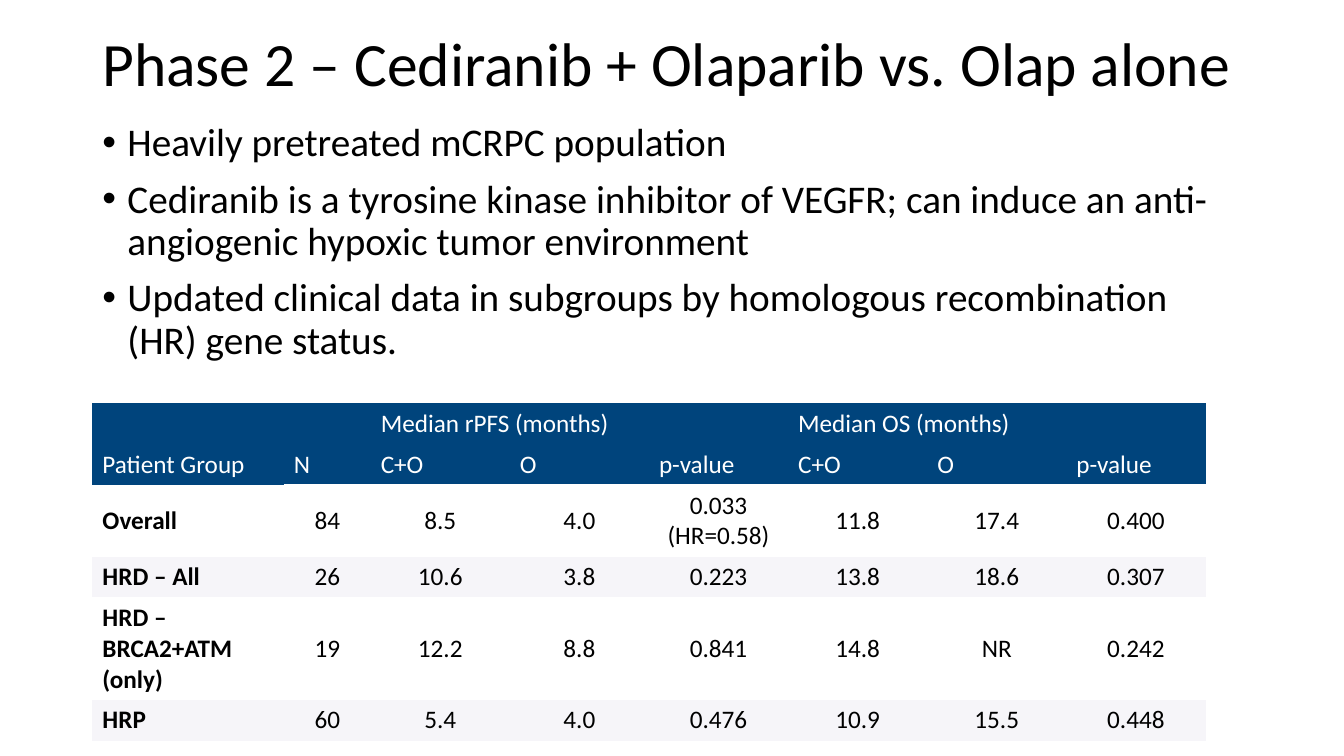
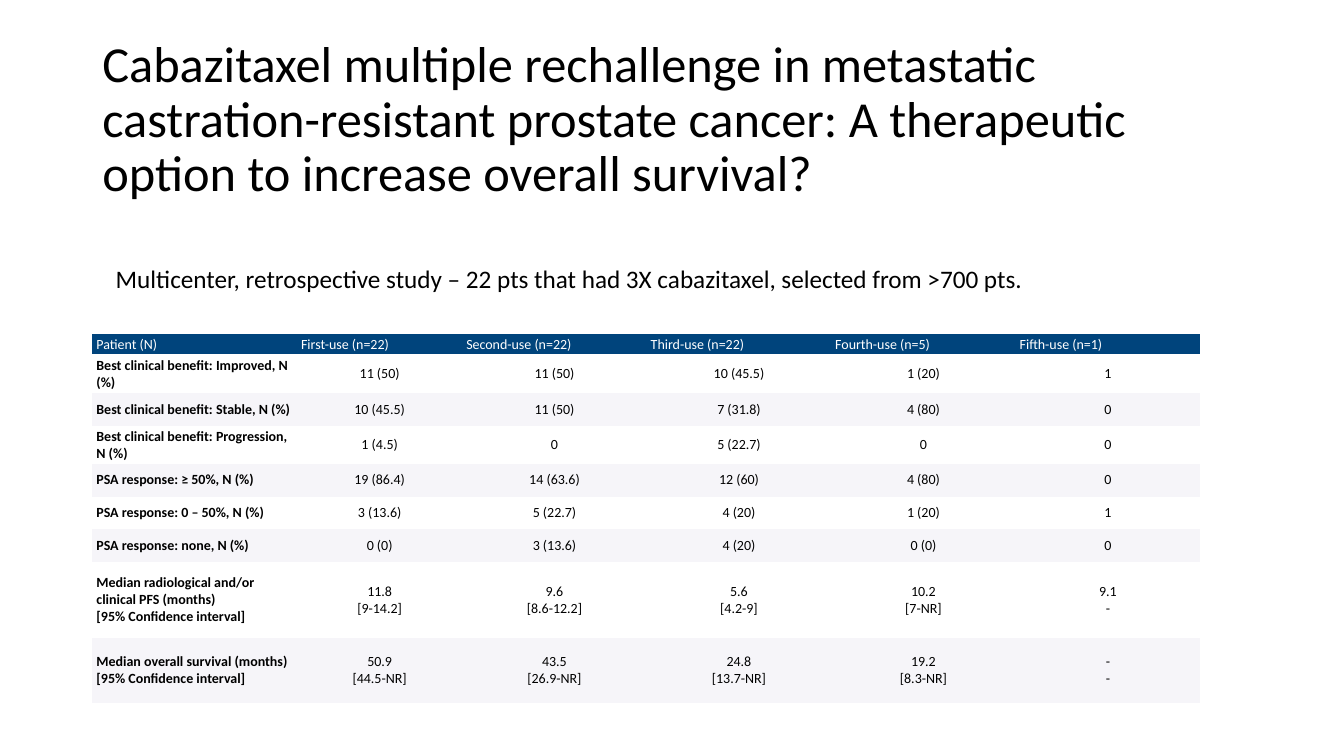
from copy import deepcopy

from lxml.etree import SubElement
from pptx import Presentation
from pptx.dml.color import RGBColor
from pptx.enum.text import MSO_ANCHOR as ANCHOR, PP_ALIGN as ALIGN
from pptx.oxml import parse_xml
from pptx.oxml.ns import nsdecls, qn
from pptx.util import Pt

COLORS = {"text": "000000", "header": "00447C", "band": "F6F5F9", "white": "FFFFFF"}
FONT = "Calibri"
LEFT, WIDTH = 66, 828
NO_STYLE = "{2D5ABB26-0587-4C30-8999-92F81FD0307C}"


def rgb(name):
    return RGBColor.from_string(COLORS[name])


def write(tf, text, size=18, color="text", bold=False, align=ALIGN.LEFT,
          spacing=None, before=None, bullet=None):
    """Fill a text frame; a list gives paragraphs, a newline a line break."""
    for i, line in enumerate([text] if isinstance(text, str) else text):
        p = tf.add_paragraph() if i else tf.paragraphs[0]
        p.text = line.replace("\n", "\v")
        p.alignment = align
        if spacing:
            p.line_spacing = spacing
        if before:
            p.space_before = Pt(before)
        for r in p.runs:
            r.font.name, r.font.size, r.font.bold = FONT, Pt(size), bold
            r.font.color.rgb = rgb(color)
        # Line breaks take the format of the text around them
        for br in p._p.findall(qn("a:br")):
            br.append(deepcopy(p.runs[0]._r.find(qn("a:rPr"))))
        if bullet:
            pPr = p._p.get_or_add_pPr()
            pPr.set("marL", str(Pt(18)))
            pPr.set("indent", str(Pt(-18)))
            SubElement(pPr, qn("a:buFont")).set("typeface", "Arial")
            SubElement(pPr, qn("a:buChar")).set("char", bullet)


def add_text(slide, box, text, anchor=ANCHOR.TOP, wrap=True, **fmt):
    tf = slide.shapes.add_textbox(*map(Pt, box)).text_frame
    tf.word_wrap, tf.vertical_anchor = wrap, anchor
    write(tf, text, **fmt)


def add_title(slide, top, height, text, size):
    add_text(slide, (LEFT, top, WIDTH, height), text, ANCHOR.MIDDLE,
             size=size, spacing=0.9)


def add_bottom_rule(cell):
    cell._tc.get_or_add_tcPr().insert(0, parse_xml(
        f'<a:lnB {nsdecls("a")} w="{Pt(0.75)}"><a:solidFill>'
        f'<a:srgbClr val="{COLORS["white"]}"/></a:solidFill></a:lnB>'))


def add_data_table(slide, top, widths, heights, rows, size, header_rows=1,
                   merges=(), margins=None):
    """Dark header rows, bold labels, centred values, every second row banded."""
    tbl = slide.shapes.add_table(len(rows), len(widths), Pt(LEFT), Pt(top),
                                 Pt(sum(widths)), Pt(sum(heights))).table
    tbl._tbl.tblPr.find(qn("a:tableStyleId")).text = NO_STYLE
    tbl.first_row = tbl.horz_banding = False
    for col, width in zip(tbl.columns, widths):
        col.width = Pt(width)
    for row, height in zip(tbl.rows, heights):
        row.height = Pt(height)
    for start, end in merges:
        tbl.cell(*start).merge(tbl.cell(*end))

    for i, row in enumerate(rows):
        header = i < header_rows
        banded = (i - header_rows) % 2 == 1
        for j, text in enumerate(row):
            cell = tbl.cell(i, j)
            if margins:
                cell.margin_left = cell.margin_right = Pt(margins[0])
                cell.margin_top = cell.margin_bottom = Pt(margins[1])
            cell.vertical_anchor = ANCHOR.BOTTOM if header else ANCHOR.MIDDLE
            if header or banded:
                cell.fill.solid()
                cell.fill.fore_color.rgb = rgb("header" if header else "band")
            else:
                cell.fill.background()
            if i == header_rows - 1:
                add_bottom_rule(cell)
            if text:
                write(cell.text_frame, text, size=size,
                      color="white" if header else "text",
                      bold=not header and j == 0,
                      align=ALIGN.LEFT if header or j == 0 else ALIGN.CENTER)


def combination_slide(slide):
    add_title(slide, 14.4, 67, "Phase 2 – Cediranib + Olaparib vs. Olap alone", 44)
    # Background points
    add_text(slide, (LEFT, 84.2, WIDTH, 186), [
        "Heavily pretreated mCRPC population",
        "Cediranib is a tyrosine kinase inhibitor of VEGFR; can induce an "
        "anti-angiogenic hypoxic tumor environment",
        "Updated clinical data in subgroups by homologous recombination (HR) "
        "gene status.",
    ], size=28, spacing=0.9, before=10, bullet="•")
    # Outcomes by patient group
    arms = ["C+O", "O", "p-value"]
    add_data_table(
        slide, 288, [136.8, 62] + [99.4] * 6, [29.2, 29.2, 51.2, 29.2, 73, 29.2], [
            ["Patient Group", "", "Median rPFS (months)", "", "",
             "Median OS (months)", "", ""],
            ["", "N"] + arms * 2,
            ["Overall", "84", "8.5", "4.0", "0.033 (HR=0.58)", "11.8", "17.4", "0.400"],
            ["HRD – All", "26", "10.6", "3.8", "0.223", "13.8", "18.6", "0.307"],
            ["HRD – BRCA2+ATM (only)", "19", "12.2", "8.8", "0.841", "14.8", "NR",
             "0.242"],
            ["HRP", "60", "5.4", "4.0", "0.476", "10.9", "15.5", "0.448"],
        ], size=18, header_rows=2,
        merges=[((0, 0), (1, 0)), ((0, 2), (0, 4)), ((0, 5), (0, 7))])


def rechallenge_slide(slide):
    add_title(slide, 28.8, 115.2,
              "Cabazitaxel multiple rechallenge in metastatic castration-resistant "
              "prostate cancer: A therapeutic option to increase overall survival?", 36)
    # Study summary
    add_text(slide, (75.6, 184.5, 665, 29),
             "Multicenter, retrospective study – 22 pts that had 3X cabazitaxel, "
             "selected from >700 pts.", wrap=False)
    # Outcomes by line of use
    add_data_table(
        slide, 238.5, [146.2, 118] + [131.8] * 4,
        [15, 27.3, 23.3, 27.3] + [23.3] * 3 + [54.9, 45.8], [
            ["Patient (N)", "First-use (n=22)", "Second-use (n=22)",
             "Third-use (n=22)", "Fourth-use (n=5)", "Fifth-use (n=1)"],
            ["Best clinical benefit: Improved, N (%)",
             "11 (50)", "11 (50)", "10 (45.5)", "1 (20)", "1"],
            ["Best clinical benefit: Stable, N (%)",
             "10 (45.5)", "11 (50)", "7 (31.8)", "4 (80)", "0"],
            ["Best clinical benefit: Progression, N (%)",
             "1 (4.5)", "0", "5 (22.7)", "0", "0"],
            ["PSA response: ≥ 50%, N (%)",
             "19 (86.4)", "14 (63.6)", "12 (60)", "4 (80)", "0"],
            ["PSA response: 0 – 50%, N (%)",
             "3 (13.6)", "5 (22.7)", "4 (20)", "1 (20)", "1"],
            ["PSA response: none, N (%)",
             "0 (0)", "3 (13.6)", "4 (20)", "0 (0)", "0"],
            ["Median radiological and/or clinical PFS (months)\n"
             "[95% Confidence interval]",
             "11.8\n[9-14.2]", "9.6\n[8.6-12.2]", "5.6\n[4.2-9]", "10.2\n[7-NR]",
             "9.1\n-"],
            ["Median overall survival (months)\n[95% Confidence interval]",
             "50.9\n[44.5-NR]", "43.5\n[26.9-NR]", "24.8\n[13.7-NR]",
             "19.2\n[8.3-NR]", "-\n-"],
        ], size=10, margins=(2.9, 1.4))


def main():
    prs = Presentation()
    prs.slide_width, prs.slide_height = Pt(960), Pt(540)
    for build in (combination_slide, rechallenge_slide):
        build(prs.slides.add_slide(prs.slide_layouts[6]))
    prs.save("out.pptx")


if __name__ == "__main__":
    main()
